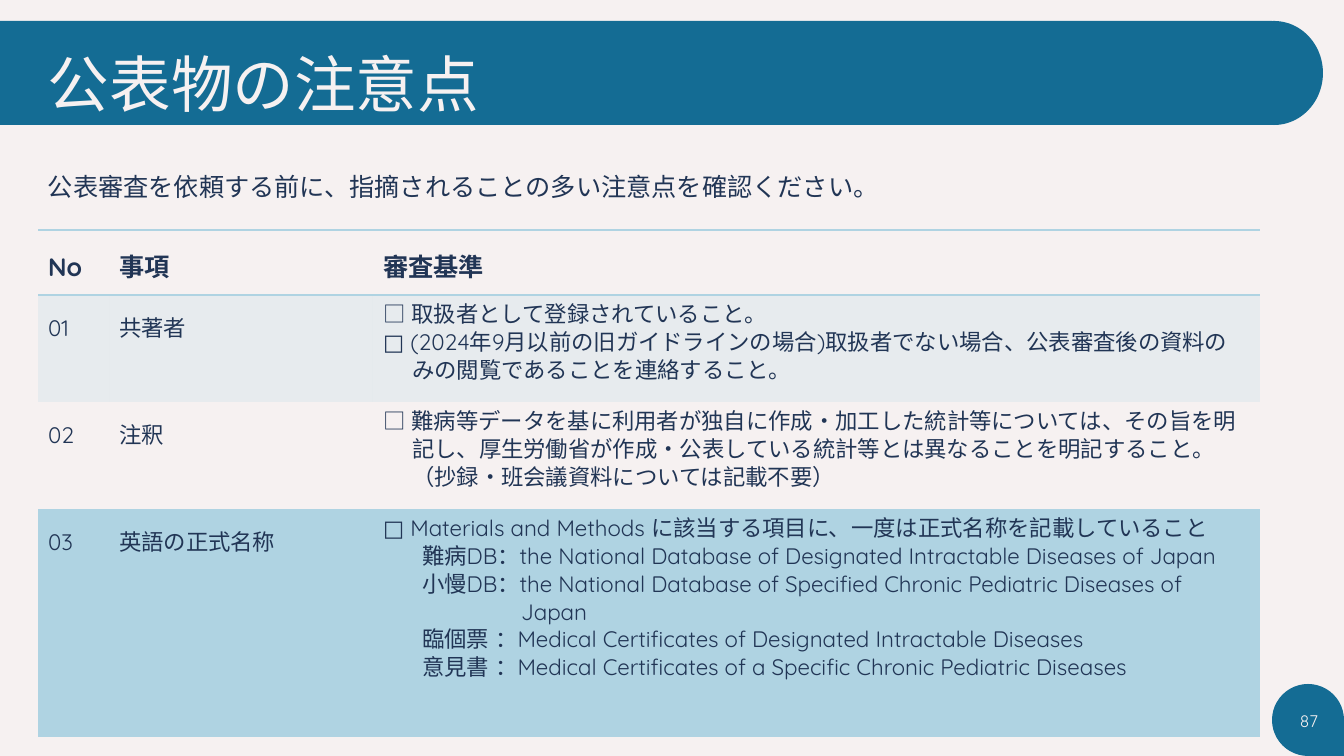
from dataclasses import dataclass
from typing import Optional

from lxml.etree import SubElement
from pptx import Presentation
from pptx.dml.color import RGBColor
from pptx.enum.shapes import MSO_SHAPE
from pptx.enum.text import MSO_ANCHOR, PP_ALIGN
from pptx.oxml.ns import qn
from pptx.util import Emu, Pt

WIDE, HIGH = 1344, 756
SCALE = 12192000 / WIDE
BLUE, PALE, NAVY, SKY = "146C94", "F6F1F1", "213555", "AFD3E2"
LATIN, CJK = "Quicksand", "Noto Sans CJK JP"
PLAIN = "{2D5ABB26-0587-4C30-8999-92F81FD0307C}"  # table style without grid


@dataclass(frozen=True)
class Box:
    x: int
    y: int
    w: int
    h: int


@dataclass(frozen=True)
class Form:
    kind: MSO_SHAPE
    box: Box
    turn: int = 0


@dataclass(frozen=True)
class Line:
    text: str
    left: int = 0
    hang: int = 0
    gap: Optional[float] = None


@dataclass(frozen=True)
class Style:
    size: int
    tint: str = NAVY
    font: str = LATIN
    bold: bool = False


@dataclass(frozen=True)
class Label:
    box: Box
    line: Line
    style: Style
    align: PP_ALIGN = PP_ALIGN.LEFT
    anchor: MSO_ANCHOR = MSO_ANCHOR.TOP


@dataclass(frozen=True)
class Row:
    high: int
    cells: tuple[tuple[Line, ...], ...]
    style: Style
    band: bool = False
    edges: tuple[str, ...] = ()


def px(num: int) -> Emu:
    return Emu(round(num * SCALE))


def color(code: str) -> RGBColor:
    return RGBColor.from_string(code)


def place(box: Box) -> tuple[Emu, ...]:
    return px(box.x), px(box.y), px(box.w), px(box.h)


def draw(slide, form: Form) -> None:
    shape = slide.shapes.add_shape(form.kind, *place(form.box))
    shape.rotation = form.turn
    shape.shadow.inherit = False
    shape.fill.solid()
    shape.fill.fore_color.rgb = color(BLUE)
    shape.line.fill.background()


def write(para, line: Line, style: Style) -> None:
    para.line_spacing = line.gap
    if line.left:
        props = para._p.get_or_add_pPr()
        props.set("marL", str(px(line.left)))
        props.set("indent", str(px(-line.hang)))
    run = para.add_run()
    run.text = line.text
    font = run.font
    font.size, font.bold, font.name = Pt(style.size), style.bold, style.font
    font.color.rgb = color(style.tint)
    east = SubElement(run._r.get_or_add_rPr(), qn("a:ea"))
    east.set("typeface", style.font)


def label(slide, item: Label) -> None:
    frame = slide.shapes.add_textbox(*place(item.box)).text_frame
    frame.word_wrap = True
    frame.vertical_anchor = item.anchor
    para = frame.paragraphs[0]
    para.alignment = item.align
    write(para, item.line, item.style)


def rule(cell, edge: str) -> None:
    props = cell._tc.get_or_add_tcPr()
    line = SubElement(props, qn(f"a:{edge}"), w=str(Pt(1)))
    fill = SubElement(line, qn("a:solidFill"))
    SubElement(fill, qn("a:srgbClr"), val=SKY)


def paint(cell, band: bool) -> None:
    if not band:
        cell.fill.background()
        return
    cell.fill.solid()
    cell.fill.fore_color.rgb = color(SKY)
    tone = cell._tc.tcPr.find(".//" + qn("a:srgbClr"))
    SubElement(tone, qn("a:alpha"), val="20000")


def grid(slide, box: Box, wides: tuple[int, ...], rows: tuple[Row, ...]) -> None:
    frame = slide.shapes.add_table(len(rows), len(wides), *place(box))
    table = frame.table
    table.first_row = table.horz_banding = False
    table._tbl.tblPr.find(qn("a:tableStyleId")).text = PLAIN
    for col, wide in zip(table.columns, wides):
        col.width = px(wide)
    for band, row in zip(table.rows, rows):
        band.height = px(row.high)
        for cell, lines in zip(band.cells, row.cells):
            for edge in row.edges:
                rule(cell, edge)
            paint(cell, row.band)
            text = cell.text_frame
            for num, line in enumerate(lines):
                para = text.add_paragraph() if num else text.paragraphs[0]
                write(para, line, row.style)


def head(text: str) -> tuple[Line, ...]:
    return (Line(text, gap=1.5),)


def check(text: str) -> Line:
    return Line("□ " + text, 29, 29)


def term(text: str) -> Line:
    return Line(text, 138, 99)


FORMS = (
    Form(MSO_SHAPE.TEAR, Box(1272, 684, 72, 72), 90),
    Form(MSO_SHAPE.FLOWCHART_CONNECTOR, Box(1225, 21, 98, 104)),
    Form(MSO_SHAPE.RECTANGLE, Box(0, 21, 1272, 104)),
)
LABELS = (
    Label(Box(38, 22, 1159, 104), Line("公表物の注意点", gap=0.9),
          Style(44, PALE), anchor=MSO_ANCHOR.BOTTOM),
    Label(Box(38, 151, 1270, 54),
          Line("公表審査を依頼する前に、指摘されることの多い注意点を確認ください。", gap=1.5),
          Style(18, font=CJK)),
    Label(Box(1278, 701, 50, 40), Line("87"), Style(12, PALE),
          PP_ALIGN.RIGHT, MSO_ANCHOR.MIDDLE),
)
BODY = Style(16)
ROWS = (
    Row(65, (head("No"), head("事項"), head("審査基準")),
        Style(18, bold=True), edges=("lnT", "lnB")),
    Row(107, (head("01"), head("共著者"), (
        check("取扱者として登録されていること。"),
        check("(2024年9月以前の旧ガイドラインの場合)取扱者でない場合、"
              "公表審査後の資料のみの閲覧であることを連絡すること。"),
    )), BODY, band=True),
    Row(107, (head("02"), head("注釈"), (
        check("難病等データを基に利用者が独自に作成・加工した統計等については、"
              "その旨を明記し、厚生労働省が作成・公表している統計等とは異なることを"
              "明記すること。（抄録・班会議資料については記載不要）"),
    )), BODY),
    Row(227, (head("03"), head("英語の正式名称"), (
        check("Materials and Methods に該当する項目に、一度は正式名称を記載していること"),
        term("難病DB：the National Database of Designated Intractable Diseases of Japan"),
        term("小慢DB：the National Database of Specified Chronic Pediatric Diseases of Japan"),
        term("臨個票 ：Medical Certificates of Designated Intractable Diseases"),
        term("意見書 ：Medical Certificates of a Specific Chronic Pediatric Diseases"),
    )), BODY, band=True, edges=("lnB",)),
)


def main() -> None:
    deck = Presentation()
    deck.slide_width, deck.slide_height = px(WIDE), px(HIGH)
    slide = deck.slides.add_slide(deck.slide_layouts[6])
    slide.background.fill.solid()
    slide.background.fill.fore_color.rgb = color(PALE)
    # Title band and page badge
    for form in FORMS:
        draw(slide, form)
    # Title, lead and page number
    for item in LABELS:
        label(slide, item)
    # Checklist
    high = sum(row.high for row in ROWS)
    grid(slide, Box(38, 230, 1222, high), (71, 264, 887), ROWS)
    deck.save("out.pptx")


if __name__ == "__main__":
    main()
